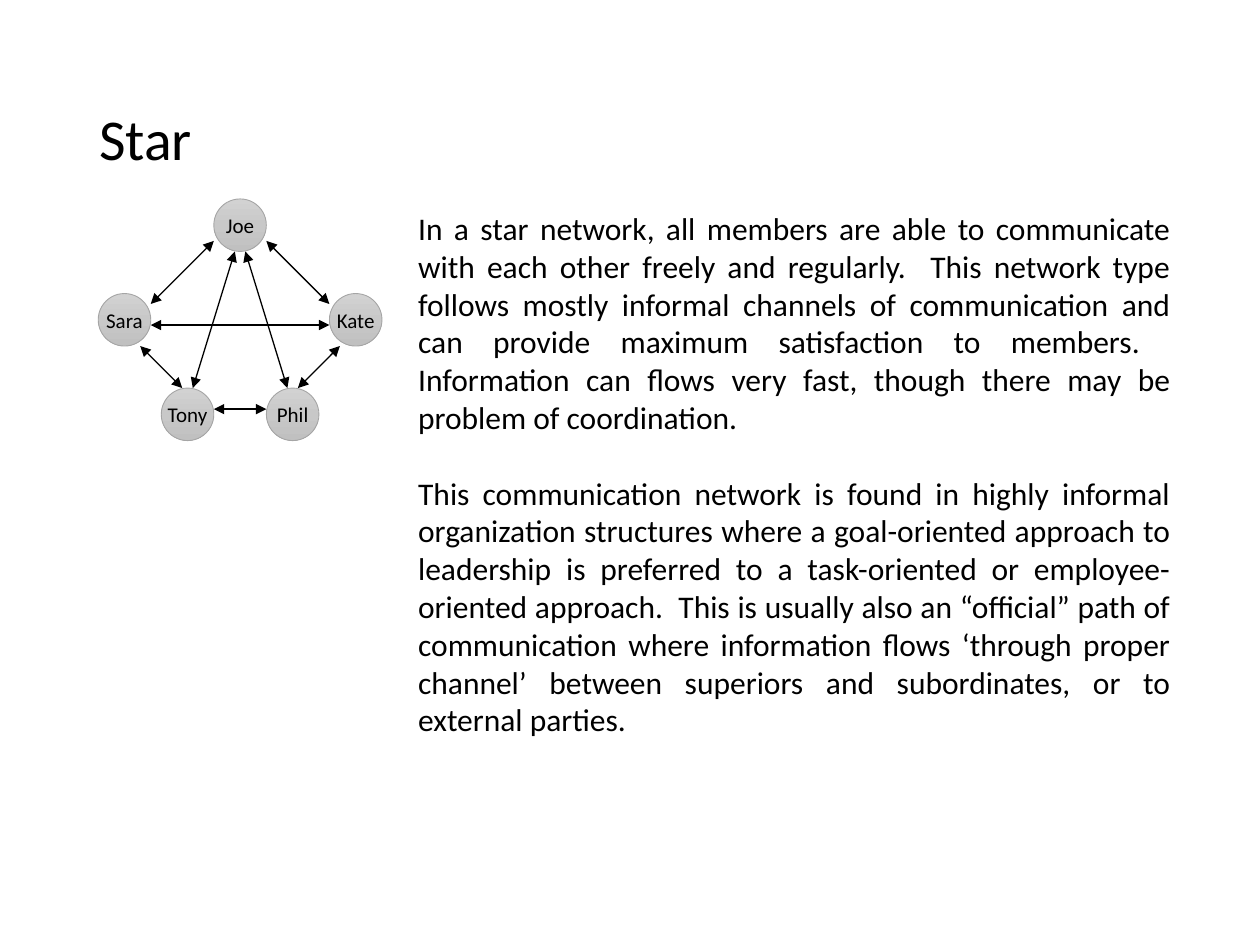
import copy

import pptx
import pptx.dml.color
import pptx.enum.shapes
import pptx.enum.text
import pptx.oxml
import pptx.oxml.ns
import pptx.util

Cm = pptx.util.Cm
Pt = pptx.util.Pt
RGB = pptx.dml.color.RGBColor
qn = pptx.oxml.ns.qn

BLACK = RGB(0x00, 0x00, 0x00)
EDGE = RGB(0xA5, 0xA5, 0xA5)
SHADES = [RGB(0xD2, 0xD2, 0xD2), RGB(0xC8, 0xC8, 0xC8), RGB(0xC0, 0xC0, 0xC0)]
FONT = "Calibri"

COLS, NODE = 27, 5
PEOPLE = [("Joe", 11, 0), ("Sara", 0, 9), ("Kate", 22, 9), ("Tony", 6, 18), ("Phil", 16, 18)]
SIDES = [((16, 4), (22, 10)), ((23, 14), (19, 18)), ((18, 18), (14, 5))]
LEVELS = [((11, 20), (16, 20)), ((5, 12), (22, 12))]

TEXT = [
    "In a star network, all members are able to communicate with each other freely "
    "and regularly.  This network type follows mostly informal channels of "
    "communication and can provide maximum satisfaction to members.  Information can "
    "flows very fast, though there may be problem of coordination. ",
    "This communication network is found in highly informal organization structures "
    "where a goal-oriented approach to leadership is preferred to a task-oriented or "
    "employee-oriented approach.  This is usually also an “official” path of "
    "communication where information flows ‘through proper channel’ between superiors "
    "and subordinates, or to external parties.",
]


def style(para, size):
    """Set the font of every run in a paragraph."""
    for run in para.runs:
        run.font.name = FONT
        run.font.size = Pt(size)
        run.font.color.rgb = BLACK


def add_title(slide, box):
    """Place the heading, centred vertically in its box."""
    frame = slide.shapes.add_textbox(*box).text_frame
    frame.word_wrap = True
    frame.vertical_anchor = pptx.enum.text.MSO_ANCHOR.MIDDLE
    frame.text = "Star"
    frame.paragraphs[0].line_spacing = 0.9
    style(frame.paragraphs[0], 33)


def add_node(group, name, x, y, size):
    """Draw one member as a shaded circle."""
    node = group.shapes.add_shape(pptx.enum.shapes.MSO_SHAPE.OVAL, x, y, size, size)
    node.shadow.inherit = False
    node.fill.gradient()
    node.fill.gradient_angle = 270
    stops = node._element.spPr.find(qn("a:gradFill")).find(qn("a:gsLst"))
    stops.append(copy.deepcopy(stops[-1]))
    for i, stop in enumerate(node.fill.gradient_stops):
        stop.position = i / 2
        stop.color.rgb = SHADES[i]
    node.line.color.rgb = EDGE
    node.line.width = Pt(0.5)
    frame = node.text_frame
    frame.word_wrap = False
    frame.vertical_anchor = pptx.enum.text.MSO_ANCHOR.MIDDLE
    frame.text = name
    frame.paragraphs[0].alignment = pptx.enum.text.PP_ALIGN.CENTER
    style(frame.paragraphs[0], 12)


def add_link(group, start, end):
    """Draw a thin line with an arrowhead at both ends."""
    link = group.shapes.add_connector(
        pptx.enum.shapes.MSO_CONNECTOR.STRAIGHT, *start, *end)
    link.line.color.rgb = BLACK
    link.line.width = Pt(0.75)
    line = link.line._get_or_add_ln()
    for tag in ("a:headEnd", "a:tailEnd"):
        line.append(pptx.oxml.xmlchemy.OxmlElement(tag))
        line[-1].set("type", "triangle")
    link._element.spPr.append(pptx.oxml.xmlchemy.OxmlElement("a:effectLst"))


def add_star(slide, box):
    """Lay out members and their links on a square grid in the box."""
    left, top, width = box
    unit = width / COLS

    def spot(x, y):
        """Turn a grid point into a slide position."""
        return round(left + x * unit), round(top + y * unit)

    group = slide.shapes.add_group_shape()
    for name, x, y in PEOPLE:
        add_node(group, name, *spot(x, y), round(NODE * unit))
    mirror = [tuple((COLS - x, y) for x, y in pair) for pair in SIDES]
    for start, end in SIDES + mirror + LEVELS:
        add_link(group, spot(*start), spot(*end))


def add_body(slide, box):
    """Place the justified description, one line apart."""
    frame = slide.shapes.add_textbox(*box).text_frame
    frame.word_wrap = True
    frame.text = "\n".join(TEXT)
    for para in frame.paragraphs:
        para.alignment = pptx.enum.text.PP_ALIGN.JUSTIFY
        style(para, 18)
    frame.paragraphs[1].space_before = Pt(21.6)


def main():
    """Build and save the slide."""
    deck = pptx.Presentation()
    deck.slide_width, deck.slide_height = Cm(25.4), Cm(19.05)
    slide = deck.slides.add_slide(deck.slide_layouts[6])
    add_title(slide, (Cm(1.75), Cm(1.02), Cm(21.9), Cm(3.68)))
    add_star(slide, (Cm(1.98), Cm(4.01), Cm(5.72)))
    add_body(slide, (Cm(8.18), Cm(4.09), Cm(15.67), Cm(11.02)))
    deck.save("out.pptx")


if __name__ == "__main__":
    main()
